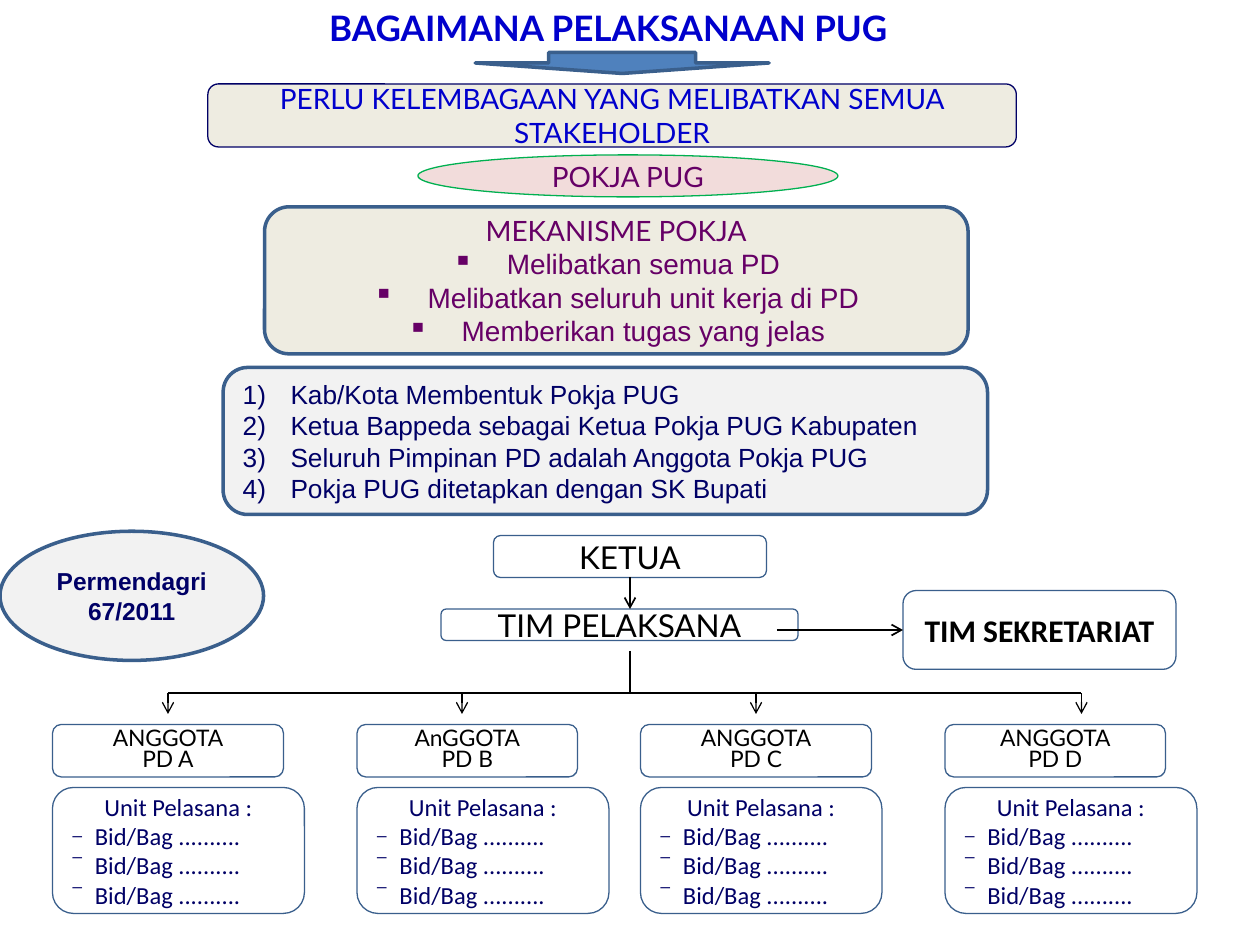
import pptx
import pptx.util
import pptx.dml.color
import pptx.enum.shapes
import pptx.enum.text
import pptx.oxml
import pptx.oxml.ns

COLS, ROWS = 120, 90  # the slide is 10 x 7.5 in, so one cell is 1/12 in
CELL = pptx.util.Inches(10) / COLS
SHAPE = pptx.enum.shapes.MSO_SHAPE
ALIGN = pptx.enum.text.PP_ALIGN
COLORS = {
    "white": "FFFFFF", "black": "000000", "blue": "0000CC", "navy": "000066",
    "purple": "660066", "green": "00B050", "steel": "3A5F8C", "arrow": "4F81BD",
    "sand": "EEECE1", "pink": "F2DCDB", "grey": "F2F2F2",
}
# PD heading, left column, heading width, unit box width, column of its arrow
MEMBERS = [
    ("ANGGOTA", "PD A", 5, 22, 24, 16),
    ("AnGGOTA", "PD B", 34, 21, 24, 44),
    ("ANGGOTA", "PD C", 61, 22, 23, 72),
    ("ANGGOTA", "PD D", 90, 21, 24, 103),
]


def cells(*values):
    return [round(v * CELL) for v in values]


def rgb(name):
    return pptx.dml.color.RGBColor.from_string(COLORS[name])


def add_box(slide, kind, area, fill="white", line="steel", weight=0.75):
    """Add a preset shape; area is left, top, width, height in grid cells."""
    sp = slide.shapes.add_shape(kind, *cells(*area))
    sp.shadow.inherit = False
    sp.fill.solid()
    sp.fill.fore_color.rgb = rgb(fill)
    sp.line.color.rgb = rgb(line)
    sp.line.width = pptx.util.Pt(weight)
    return sp


def set_text(sp, lines, size, color="black", font="Lato", bold=False, spacing=None):
    tf = sp.text_frame
    tf.word_wrap = True
    tf.vertical_anchor = pptx.enum.text.MSO_ANCHOR.MIDDLE
    tf.text = "\n".join(lines)
    for p in tf.paragraphs:
        p.alignment = ALIGN.CENTER
        if spacing:
            p.line_spacing = pptx.util.Pt(spacing)
        for r in p.runs:
            r.font.size = pptx.util.Pt(size)
            r.font.name = font
            r.font.bold = bold
            r.font.color.rgb = rgb(color)
    return tf


def set_bullet(p, indent, char=None):
    """Give a hanging bullet, or a number such as 1) when char is missing."""
    pPr = p._p.get_or_add_pPr()
    pPr.set("marL", str(pptx.util.Inches(indent)))
    pPr.set("indent", str(-pptx.util.Inches(indent)))
    tag, key, value = (("a:buChar", "char", char) if char
                       else ("a:buAutoNum", "type", "arabicParenR"))
    bullet = pptx.oxml.parse_xml(f"<{tag} {pptx.oxml.ns.nsdecls('a')}/>")
    bullet.set(key, value)
    pPr.append(bullet)


def add_line(slide, start, end, weight=0.75, arrow=False):
    cn = slide.shapes.add_connector(
        pptx.enum.shapes.MSO_CONNECTOR.STRAIGHT, *cells(*start, *end))
    cn.line.color.rgb = rgb("black")
    cn.line.width = pptx.util.Pt(weight)
    ns = pptx.oxml.ns.nsdecls("a")
    if arrow:
        cn.line._get_or_add_ln().append(
            pptx.oxml.parse_xml(f'<a:tailEnd {ns} type="arrow"/>'))
    cn._element.spPr.append(pptx.oxml.parse_xml(f"<a:effectLst {ns}/>"))
    return cn


def add_title(slide):
    sp = slide.shapes.add_textbox(*cells(28.8, 0, 58.3, 5.25))
    tf = set_text(sp, ["BAGAIMANA PELAKSANAAN PUG"], 20, "blue", bold=True)
    tf.word_wrap = False
    tf.vertical_anchor = pptx.enum.text.MSO_ANCHOR.TOP


def add_institution(slide):
    add_box(slide, SHAPE.DOWN_ARROW, (45.25, 5, 28, 2), "arrow", weight=2)
    need = add_box(slide, SHAPE.ROUNDED_RECTANGLE, (19.8, 8, 77, 6), "sand", "navy")
    set_text(need, ["PERLU KELEMBAGAAN YANG MELIBATKAN SEMUA STAKEHOLDER"], 16, "blue")
    pokja = add_box(slide, SHAPE.OVAL, (39.8, 14.75, 40, 4), "pink", "green")
    set_text(pokja, ["POKJA PUG"], 16, "purple")

    mechanism = add_box(slide, SHAPE.ROUNDED_RECTANGLE, (25.2, 19.7, 67, 14),
                        "sand", weight=2)
    tf = set_text(mechanism, [
        "MEKANISME POKJA", "Melibatkan semua PD",
        "Melibatkan seluruh unit kerja di PD", "Memberikan tugas yang jelas",
    ], 16, "purple")
    for p in tf.paragraphs[1:]:
        p.runs[0].font.name = "Arial"
        set_bullet(p, 0.43, "▪")

    steps = add_box(slide, SHAPE.ROUNDED_RECTANGLE, (21.25, 35, 72.8, 14),
                    "grey", weight=2)
    tf = set_text(steps, [
        "Kab/Kota Membentuk Pokja PUG",
        "Ketua Bappeda sebagai Ketua Pokja PUG Kabupaten",
        "Seluruh Pimpinan PD adalah Anggota Pokja PUG",
        "Pokja PUG ditetapkan dengan SK Bupati",
    ], 15, "navy", "Arial")
    for p in tf.paragraphs:
        p.alignment = ALIGN.JUSTIFY
        set_bullet(p, 0.38)

    rule = add_box(slide, SHAPE.OVAL, (0, 50.6, 25.1, 12.3), "grey", weight=2)
    set_text(rule, ["Permendagri 67/2011"], 14, "navy", "Arial", bold=True)


def add_leaders(slide):
    head = add_box(slide, SHAPE.ROUNDED_RECTANGLE, (47, 51, 26, 4))
    set_text(head, ["KETUA"], 18)
    team = add_box(slide, SHAPE.ROUNDED_RECTANGLE, (42, 58, 34, 3))
    set_text(team, ["TIM PELAKSANA"], 18)
    office = add_box(slide, SHAPE.ROUNDED_RECTANGLE, (86, 56.25, 26, 7.5))
    set_text(office, ["TIM SEKRETARIAT"], 18, font="Calibri", bold=True)
    add_line(slide, (60, 55), (60, 58), 1, arrow=True).begin_connect(head, 2)
    add_line(slide, (74, 60), (86, 60), 1, arrow=True).end_connect(office, 1)


def add_member(slide, title, unit, left, title_width, unit_width, drop):
    sp = add_box(slide, SHAPE.ROUNDED_RECTANGLE, (left, 69, title_width, 5))
    set_text(sp, [title, unit], 13, spacing=12)
    sp = add_box(slide, SHAPE.ROUNDED_RECTANGLE, (left, 75, unit_width, 12))
    tf = set_text(sp, ["Unit Pelasana :"] + ["Bid/Bag .........."] * 3,
                  14, "navy", "Calibri")
    for p, char in zip(tf.paragraphs[1:], "₋⁻⁻"):
        p.alignment = ALIGN.JUSTIFY
        set_bullet(p, 0.19, char)
    add_line(slide, (drop, 66), (drop, 68), arrow=True)


def main():
    prs = pptx.Presentation()
    prs.slide_width, prs.slide_height = cells(COLS, ROWS)
    slide = prs.slides.add_slide(prs.slide_layouts[6])
    add_title(slide)
    add_institution(slide)
    add_leaders(slide)
    add_line(slide, (60, 62), (60, 66))
    add_line(slide, (MEMBERS[0][-1], 66), (MEMBERS[-1][-1], 66))
    for member in MEMBERS:
        add_member(slide, *member)
    prs.save("out.pptx")


if __name__ == "__main__":
    main()
